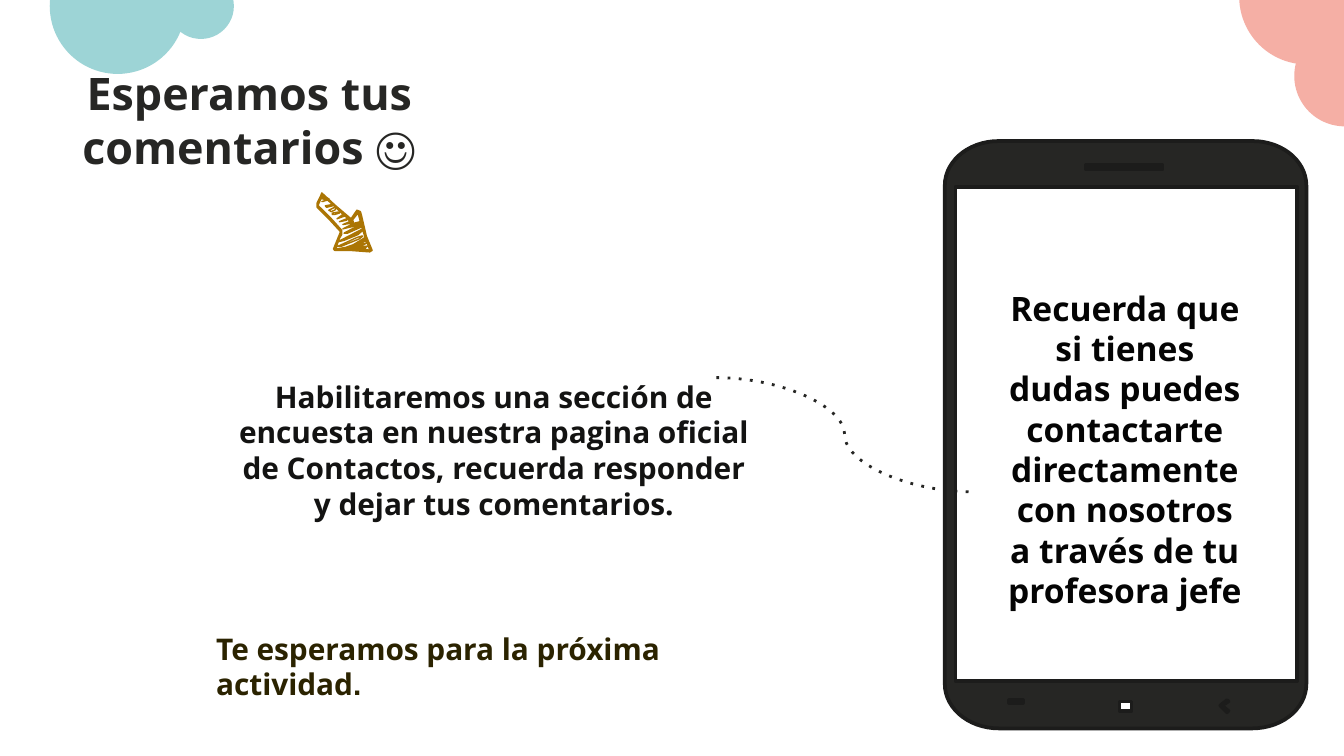
import math

import pptx
import pptx.util
import pptx.oxml.ns
from lxml import etree
from pptx.dml.color import RGBColor
from pptx.enum.shapes import MSO_CONNECTOR, MSO_SHAPE
from pptx.enum.text import MSO_ANCHOR, PP_ALIGN

PX = 9144  # 100 px to the inch
CORAL = RGBColor(0xF5, 0xAF, 0xA5)
TEAL = RGBColor(0x9D, 0xD4, 0xD6)
CHARCOAL = RGBColor(0x26, 0x26, 0x24)
EDGE = RGBColor(0x1C, 0x1C, 0x1B)
INK = RGBColor(0x13, 0x13, 0x12)
BLACK = RGBColor(0x04, 0x04, 0x04)
OLIVE = RGBColor(0x2B, 0x23, 0x00)
OCHRE = RGBColor(0xAB, 0x75, 0x04)
WHITE = RGBColor(0xFF, 0xFF, 0xFF)

prs = pptx.Presentation()
prs.slide_width = 1000 * PX
prs.slide_height = prs.slide_width * 9 // 16
slide = prs.slides.add_slide(prs.slide_layouts[6])


def add_text(box, text, size, color, align, anchor, inset_y):
    area = slide.shapes.add_textbox(*[v * PX for v in box])
    frame = area.text_frame
    frame.word_wrap = True
    frame.vertical_anchor = anchor
    frame.margin_left = frame.margin_right = 10 * PX
    frame.margin_top = frame.margin_bottom = inset_y * PX
    frame.text = text
    paragraph = frame.paragraphs[0]
    paragraph.alignment = align
    font = paragraph.runs[0].font
    font.name, font.size, font.bold = "Open Sans", pptx.util.Pt(size), True
    font.color.rgb = color
    return paragraph


def add_outline(contours, fill, edge, width):
    """Closed contours in one shape; those inside the first become holes."""
    contours = [[(round(x * PX), round(y * PX)) for x, y in contour] for contour in contours]
    builder = slide.shapes.build_freeform(*contours[0][0])
    for index, contour in enumerate(contours):
        if index:
            builder.move_to(*contour[0])
        builder.add_line_segments(contour[1:], close=True)
    shape = builder.convert_to_shape()
    shape.shadow.inherit = False
    shape.fill.solid()
    shape.fill.fore_color.rgb = fill
    shape.line.color.rgb = edge
    shape.line.width = pptx.util.Pt(width)


# Corner clouds
for left, top, size, color in [(963, 19, 75, CORAL), (922, -53, 101, CORAL),
                               (37, -46, 101, TEAL), (125, -20, 49, TEAL)]:
    cloud = slide.shapes.add_shape(MSO_SHAPE.OVAL, left * PX, top * PX, size * PX, size * PX)
    cloud.shadow.inherit = False
    cloud.fill.solid()
    cloud.fill.fore_color.rgb = color
    cloud.line.fill.background()

# Title and messages
add_text((51, 39, 269, 96), "Esperamos tus comentarios ☺", 24, CHARCOAL,
         PP_ALIGN.CENTER, MSO_ANCHOR.TOP, 10)
add_text((165, 249, 405, 149),
         "Habilitaremos una sección de encuesta en nuestra pagina oficial "
         "de Contactos, recuerda responder y dejar tus comentarios.",
         16, INK, PP_ALIGN.CENTER, MSO_ANCHOR.BOTTOM, 10)
add_text((737, 195, 200, 269),
         "Recuerda que si tienes dudas puedes contactarte directamente "
         "con nosotros a través de tu profesora jefe",
         18, BLACK, PP_ALIGN.CENTER, MSO_ANCHOR.BOTTOM, 10)

# Dotted link to the phone
link = slide.shapes.add_connector(MSO_CONNECTOR.CURVE, 533 * PX, 281 * PX, 724 * PX, 366 * PX)
link.line.color.rgb = CHARCOAL
link.line.width = pptx.util.Pt(1.5)
link_props = link.element.spPr
dash = etree.SubElement(link_props.find(pptx.oxml.ns.qn("a:ln")), pptx.oxml.ns.qn("a:prstDash"))
dash.set("val", "dot")
etree.SubElement(link_props, pptx.oxml.ns.qn("a:effectLst"))

# Sketched arrow: rim, tip, middle stripe, shaft with head
arrow = [
    [(267, 157), (262, 163), (249, 154), (237, 145), (236, 147), (233, 152),
     (233, 155), (244, 164), (253, 172), (247, 184), (248, 185), (261, 185),
     (278, 186), (280, 185), (275, 175), (271, 161), (270, 158)],
    [(275, 180), (276, 180), (278, 185), (273, 184), (276, 182), (268, 183),
     (266, 183), (273, 181), (275, 180), (266, 182), (260, 183), (266, 182),
     (273, 179), (275, 178)],
    [(274, 176), (264, 181), (257, 183), (249, 184), (251, 179), (256, 178),
     (268, 174), (272, 171)],
    [(270, 165), (265, 166), (255, 170), (260, 169), (271, 167), (263, 170),
     (256, 173), (259, 173), (270, 169), (272, 169), (272, 170), (253, 178),
     (251, 178), (254, 174), (254, 171), (244, 162), (234, 154), (234, 153),
     (237, 148), (239, 148), (237, 149), (242, 150), (254, 159), (255, 160),
     (250, 163), (257, 161), (261, 165), (255, 167), (263, 166), (264, 165),
     (263, 164), (268, 159)],
]
hatches = [
    [(252, 159), (253, 158), (246, 159), (246, 160), (248, 160)],
    [(246, 154), (246, 153), (240, 154), (241, 155)],
    [(259, 163), (258, 163), (252, 165), (258, 164)],
    [(248, 157), (249, 156), (248, 155), (243, 157), (245, 158)],
    [(238, 151), (237, 151), (242, 150), (243, 149), (242, 149)],
    [(267, 176), (251, 182), (250, 182), (254, 182), (260, 180), (269, 177),
     (272, 175), (271, 175)],
]
for contours, fill in [(arrow, OCHRE)] + [([hatch], WHITE) for hatch in hatches]:
    # Narrow and lengthen the sketch about its centre
    steeper = [[(256 + (x - 256) * 0.87, 165 + (y - 165) * 1.07) for x, y in contour]
               for contour in contours]
    add_outline(steeper, fill, OCHRE, 0.75)

# Phone: rounded body, then speaker, screen and buttons as openings
corners = [(932, 509, 0), (743, 509, 90), (743, 138, 180), (932, 138, 270)]
body = [(x + 40 * math.cos(math.radians(start + step)),
         y + 33 * math.sin(math.radians(start + step)))
        for x, y, start in corners for step in range(0, 91, 6)]
openings = [[(left, top), (right, top), (right, bottom), (left, bottom)]
            for left, top, right, bottom in [(808, 123, 865, 126), (711, 139, 965, 507),
                                             (751, 521, 761, 523), (833, 522, 842, 529)]]
back_button = [(913, 521), (914, 522), (909, 525), (914, 529), (913, 530), (908, 525)]
add_outline([body, *openings, back_button], CHARCOAL, EDGE, 2)

# Farewell
farewell = add_text((151, 464, 378, 64), "Te esperamos para la próxima actividad", 16, OLIVE,
                    PP_ALIGN.LEFT, MSO_ANCHOR.TOP, 5)
stop = farewell.add_run()
stop.text = "."
stop.font.name, stop.font.size, stop.font.bold = "Arial", pptx.util.Pt(16), True
stop.font.color.rgb = OLIVE

prs.save("out.pptx")
